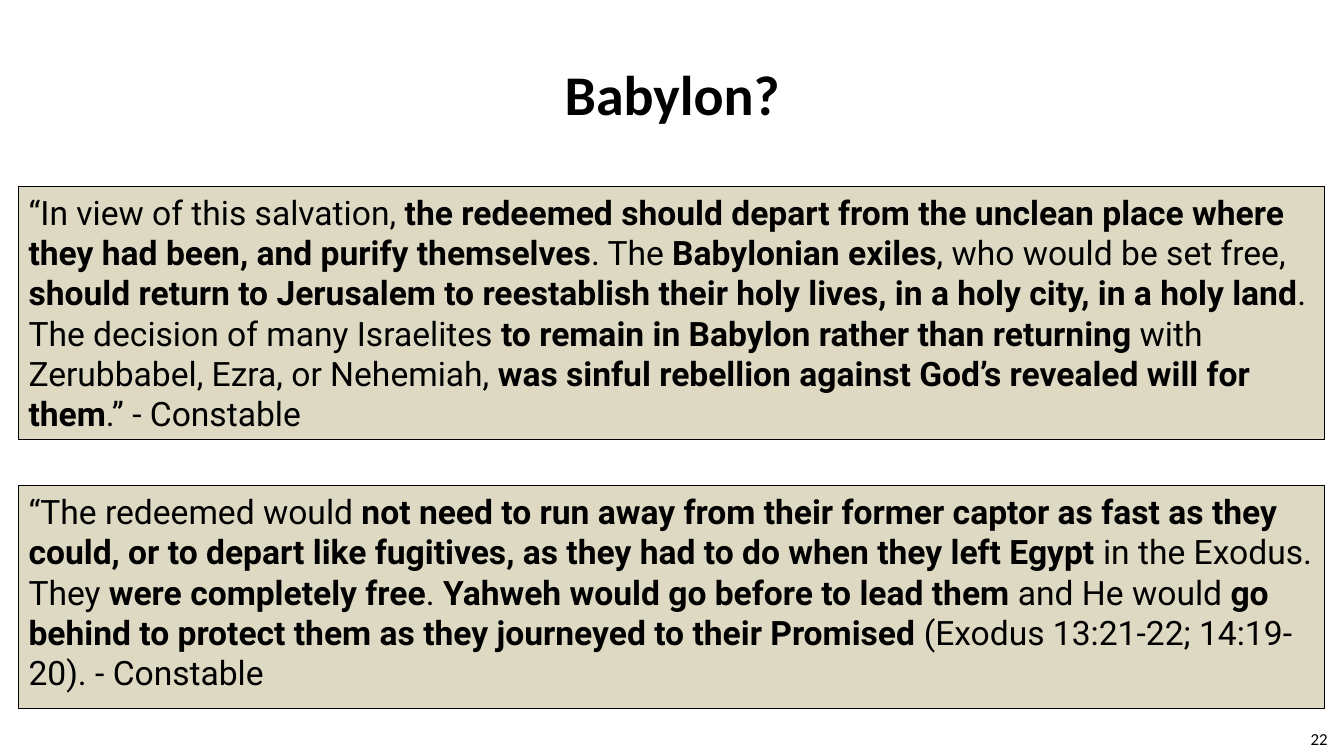
"""Build the "Babylon?" slide with two quotations in tinted boxes."""
from dataclasses import dataclass

from pptx import Presentation
from pptx.dml.color import RGBColor
from pptx.enum.shapes import MSO_SHAPE
from pptx.enum.text import MSO_ANCHOR, PP_ALIGN
from pptx.util import Cm, Pt


@dataclass(frozen=True)
class Theme:
    ink: RGBColor = RGBColor(0x00, 0x00, 0x00)
    panel: RGBColor = RGBColor(0xDD, 0xD9, 0xC3)
    heading_font: str = "Calibri"
    quote_font: str = "Roboto"
    title_size: Pt = Pt(40)
    quote_size: Pt = Pt(24)
    number_size: Pt = Pt(12)


THEME = Theme()


def add_span(para, text, name, size, bold=False):
    """Add one formatted piece of text to a paragraph."""
    span = para.add_run()
    span.text = text
    for attribute, value in {"name": name, "size": size, "bold": bold}.items():
        setattr(span.font, attribute, value)
    span.font.color.rgb = THEME.ink


def set_frame(box, anchor, align):
    """Format a shape's text frame and return its first paragraph."""
    frame = box.text_frame
    layout = {
        "word_wrap": True, "vertical_anchor": anchor,
        "margin_left": Cm(0.25), "margin_right": Cm(0.25),
        "margin_top": Cm(0.13), "margin_bottom": Cm(0.13),
    }
    for attribute, value in layout.items():
        setattr(frame, attribute, value)
    para = frame.paragraphs[0]
    para.alignment = align
    para.space_before = Pt(0)
    return para


quotes = [
    (4.7, 6.38, [
        "“In view of this salvation, ",
        "the redeemed should depart from the unclean place where they had been, and purify themselves",
        ". The ",
        "Babylonian exiles",
        ", who would be set free, ",
        "should return to Jerusalem to reestablish their holy lives, in a holy city, in a holy land",
        ". The decision of many Israelites ",
        "to remain in Babylon rather than returning",
        " with Zerubbabel, Ezra, or Nehemiah, ",
        "was sinful rebellion against God’s revealed will for them",
        ".” - Constable",
    ]),
    (12.24, 5.61, [
        "“The redeemed would ",
        "not need to run away from their former captor as fast as they could, "
        "or to depart like fugitives, as they had to do when they left Egypt ",
        "in the Exodus. They ",
        "were completely free",
        ". ",
        "Yahweh would go before to lead them ",
        "and He would ",
        "go behind to protect them as they journeyed to their Promised ",
        "(Exodus 13:21-22; 14:19-20). - Constable",
    ]),
]

deck = Presentation()
deck.slide_width, deck.slide_height = Cm(33.87), Cm(19.05)
page = deck.slides.add_slide(deck.slide_layouts[5])

title = page.shapes.title
title.left, title.top, title.width, title.height = Cm(1.7), Cm(0.76), Cm(30.48), Cm(3.18)
para = set_frame(title, MSO_ANCHOR.MIDDLE, PP_ALIGN.CENTER)
add_span(para, "Babylon?", THEME.heading_font, THEME.title_size, True)

for top, height, pieces in quotes:
    box = page.shapes.add_shape(MSO_SHAPE.RECTANGLE, Cm(0.47), Cm(top), Cm(32.9), Cm(height))
    box.shadow.inherit = False
    box.fill.solid()
    box.fill.fore_color.rgb = THEME.panel
    box.line.color.rgb = THEME.ink
    box.line.width = Pt(0.75)
    para = set_frame(box, MSO_ANCHOR.TOP, PP_ALIGN.LEFT)
    for index, piece in enumerate(pieces):
        add_span(para, piece, THEME.quote_font, THEME.quote_size, index % 2 == 1)

number = page.shapes.add_textbox(Cm(31.17), Cm(18.11), Cm(2.54), Cm(1.02))
para = set_frame(number, MSO_ANCHOR.MIDDLE, PP_ALIGN.RIGHT)
add_span(para, "22", THEME.heading_font, THEME.number_size)

deck.save("out.pptx")
